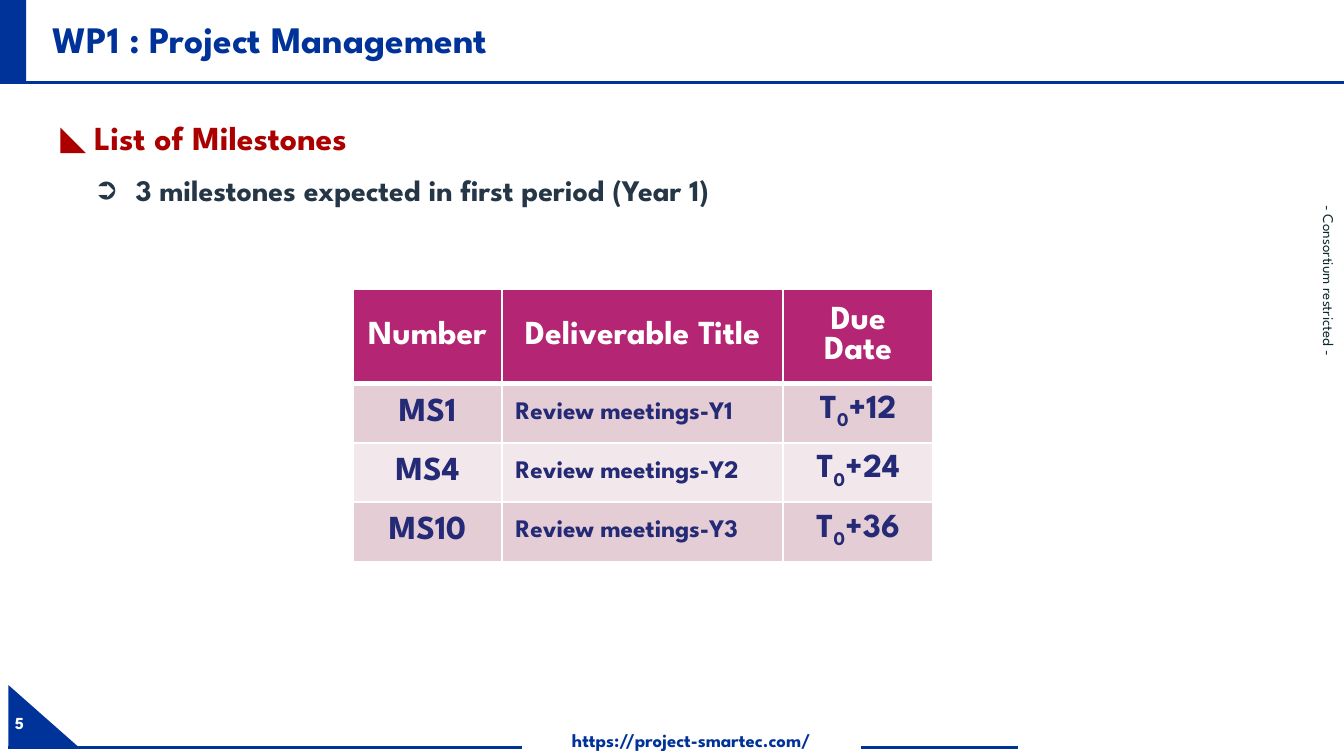
import dataclasses
import typing

import lxml.etree
import pptx
import pptx.dml.color
import pptx.enum.shapes
import pptx.enum.text
import pptx.oxml.ns
import pptx.util

Pt = pptx.util.Pt
Align = pptx.enum.text.PP_ALIGN
Anchor = pptx.enum.text.MSO_ANCHOR
Preset = pptx.enum.shapes.MSO_SHAPE
qn = pptx.oxml.ns.qn

FONT = "League Spartan"
BLUE, RED, SLATE = "003399", "AC0000", "253746"
WHITE, MAGENTA, NAVY = "FFFFFF", "B42573", "242A75"
BAND_FILLS = ("E5CDD5", "F2E8EB")


@dataclasses.dataclass
class Area:
    left: float
    top: float
    width: float
    height: float

    def lengths(self) -> list[int]:
        return [Pt(value) for value in dataclasses.astuple(self)]


@dataclasses.dataclass
class Style:
    size: float
    color: str
    bold: bool = True
    align: Align = Align.LEFT


@dataclasses.dataclass
class Bullet:
    text: str
    symbol: str
    level: int
    indent: float
    hanging: float
    before: float
    after: float
    style: Style


@dataclasses.dataclass
class Label:
    text: str
    area: Area
    style: Style
    anchor: Anchor
    margins: tuple[float, float, float, float]
    vertical: bool = False


@dataclasses.dataclass
class Milestone:
    number: str
    title: str
    month: int


def rgb(color: str) -> pptx.dml.color.RGBColor:
    return pptx.dml.color.RGBColor.from_string(color)


def style_paragraph(para: typing.Any, style: Style) -> None:
    para.alignment = style.align
    font = para.font
    font.name, font.size, font.bold = FONT, Pt(style.size), style.bold
    font.color.rgb = rgb(style.color)


def place(shape: typing.Any, area: Area) -> None:
    shape.left, shape.top, shape.width, shape.height = area.lengths()


def add_block(page: typing.Any, preset: Preset, area: Area) -> None:
    block = page.shapes.add_shape(preset, *area.lengths())
    block.shadow.inherit = False
    block.fill.solid()
    block.fill.fore_color.rgb = rgb(BLUE)
    block.line.fill.background()


def add_rule(page: typing.Any, start: float, end: float, y: float) -> None:
    rule = page.shapes.add_connector(
        pptx.enum.shapes.MSO_CONNECTOR.STRAIGHT, Pt(start), Pt(y), Pt(end), Pt(y))
    rule.line.color.rgb = rgb(BLUE)
    rule.line.width = Pt(1.5)
    lxml.etree.SubElement(rule.element.spPr, qn("a:effectLst"))


def add_label(page: typing.Any, label: Label) -> None:
    box = page.shapes.add_textbox(*label.area.lengths())
    frame = box.text_frame
    frame.word_wrap = True
    frame.vertical_anchor = label.anchor
    (frame.margin_left, frame.margin_top,
     frame.margin_right, frame.margin_bottom) = [Pt(value) for value in label.margins]
    if label.vertical:
        box.element.txBody.bodyPr.set("vert", "eaVert")
    frame.text = label.text
    style_paragraph(frame.paragraphs[0], label.style)


def write_bullet(para: typing.Any, bullet: Bullet) -> None:
    para.text, para.level = bullet.text, bullet.level
    para.space_before, para.space_after = Pt(bullet.before), Pt(bullet.after)
    properties = para._p.get_or_add_pPr()
    properties.set("marL", str(Pt(bullet.indent)))
    properties.set("indent", str(-Pt(bullet.hanging)))
    tint = lxml.etree.SubElement(properties, qn("a:buClr"))
    lxml.etree.SubElement(tint, qn("a:srgbClr"), val=bullet.style.color)
    lxml.etree.SubElement(properties, qn("a:buChar"), char=bullet.symbol)
    style_paragraph(para, bullet.style)


def format_cell(cell: typing.Any, fill: str, style: Style, bottom: float = 1) -> None:
    cell.vertical_anchor = Anchor.MIDDLE
    properties = cell._tc.get_or_add_tcPr()
    for side, width in (("L", 1), ("R", 1), ("T", 1), ("B", bottom)):
        border = lxml.etree.SubElement(properties, qn(f"a:ln{side}"), w=str(Pt(width)))
        paint = lxml.etree.SubElement(border, qn("a:solidFill"))
        lxml.etree.SubElement(paint, qn("a:srgbClr"), val=WHITE)
    cell.fill.solid()
    cell.fill.fore_color.rgb = rgb(fill)
    style_paragraph(cell.text_frame.paragraphs[0], style)


def write_due_date(para: typing.Any, month: int) -> None:
    for text, baseline in (("T", 0), ("0", -25000), (f"+{month}", 0)):
        span = para.add_run()
        span.text = text
        if baseline:
            span._r.get_or_add_rPr().set("baseline", str(baseline))


def add_milestones(page: typing.Any, area: Area, milestones: list[Milestone]) -> None:
    table = page.shapes.add_table(len(milestones) + 1, 3, *area.lengths()).table
    for column, width in zip(table.columns, (80, 150.5, 80.5)):
        column.width = Pt(width)
    heading = Style(18, WHITE, align=Align.CENTER)
    for cell, text in zip(table.rows[0].cells, ("Number", "Deliverable Title", "Due Date")):
        cell.text = text
        format_cell(cell, MAGENTA, heading, bottom=3)
    centred = Style(18, NAVY, align=Align.CENTER)
    for index, milestone in enumerate(milestones):
        number, title, due = table.rows[index + 1].cells
        number.text, title.text = milestone.number, milestone.title
        write_due_date(due.text_frame.paragraphs[0], milestone.month)
        for cell, style in ((number, centred), (title, Style(13.5, NAVY)), (due, centred)):
            format_cell(cell, BAND_FILLS[index % 2], style)


def main() -> None:
    deck = pptx.Presentation()
    deck.slide_width, deck.slide_height = Pt(720), Pt(405)
    page = deck.slides.add_slide(deck.slide_layouts[1])

    # Frame: corner, header bar and rules
    add_block(page, Preset.RIGHT_TRIANGLE, Area(4.5, 367, 38.5, 34))
    add_block(page, Preset.RECTANGLE, Area(0, -1.5, 14, 45.5))
    for start, end, y in ((-0.5, 720, 44.3), (461, 545.5, 400.3), (4.5, 279.5, 400.3)):
        add_rule(page, start, end, y)

    # Page number, web address and marking
    for label in (
        Label("5", Area(3, 376.5, 31, 21.6), Style(9, WHITE), Anchor.MIDDLE, (5, 3, 5, 3)),
        Label("https://project-smartec.com/", Area(279.5, 390.3, 181.5, 20),
              Style(10, BLUE, align=Align.CENTER), Anchor.TOP, (7.2, 0, 7.2, 0)),
        Label("- Consortium restricted -", Area(704, 110, 16, 191),
              Style(8, "0C272D", False, Align.CENTER), Anchor.MIDDLE,
              (7.2, 0, 7.2, 3.6), vertical=True),
    ):
        add_label(page, label)

    # Title
    title = page.shapes.title
    place(title, Area(21, 0, 683, 44))
    title.text_frame.text = "WP1 : Project Management"
    title.text_frame.vertical_anchor = Anchor.MIDDLE
    title.text_frame.auto_size = pptx.enum.text.MSO_AUTO_SIZE.NONE
    title.text_frame.paragraphs[0].line_spacing = 0.9
    style_paragraph(title.text_frame.paragraphs[0], Style(20, BLUE))

    # Bulleted list
    body = page.placeholders[1]
    place(body, Area(14.4, 54.7, 690, 42.5))
    frame = body.text_frame
    frame.auto_size = pptx.enum.text.MSO_AUTO_SIZE.NONE
    frame.margin_top = Pt(8.1)
    write_bullet(frame.paragraphs[0], Bullet(
        "List of Milestones", "◣", 0, 28.8, 18, 0, 5.2, Style(18, RED)))
    write_bullet(frame.add_paragraph(), Bullet(
        "3 milestones expected in first period (Year 1)", "➲", 1, 51, 22.3, 2.2, 4.5,
        Style(16, SLATE)))

    # Milestone table
    add_milestones(page, Area(189, 155, 311, 117), [
        Milestone("MS1", "Review meetings-Y1", 12),
        Milestone("MS4", "Review meetings-Y2", 24),
        Milestone("MS10", "Review meetings-Y3", 36),
    ])

    deck.save("out.pptx")


if __name__ == "__main__":
    main()
